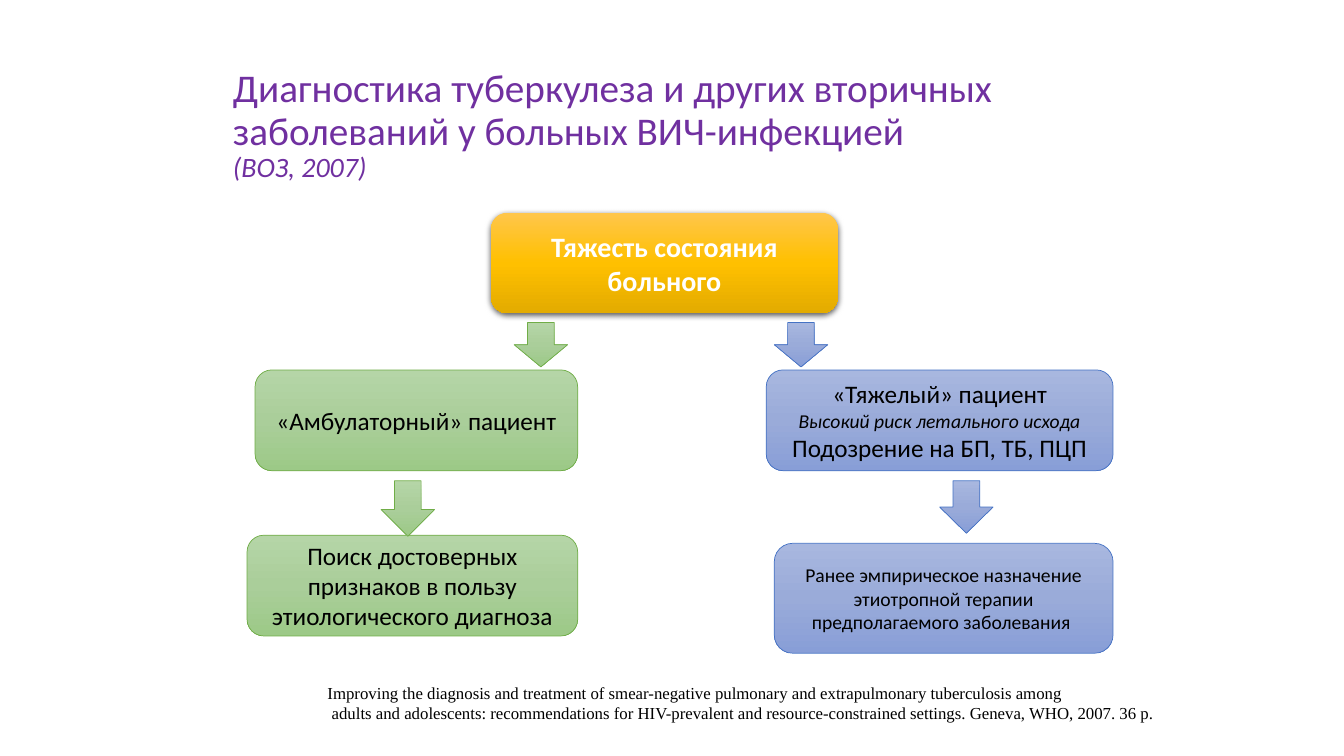
from copy import deepcopy
from dataclasses import dataclass

from lxml.etree import SubElement
from pptx import Presentation
from pptx.dml.color import RGBColor
from pptx.enum.shapes import MSO_SHAPE
from pptx.enum.text import MSO_ANCHOR, MSO_AUTO_SIZE, PP_ALIGN
from pptx.oxml.ns import qn
from pptx.util import Pt

PX = 9144
COLOURS = {
    "title": "7030A0",
    "dark": "000000",
    "light": "FFFFFF",
    "green line": "70AD47",
    "blue line": "4472C4",
}
GRADIENTS = {
    "green": ("B5D5A7", "AACE9A", "9CC987"),
    "blue": ("A8B7DF", "9AABD9", "889ED7"),
    "gold": ("FFC64B", "FFC000", "E3AB00"),
}


@dataclass(frozen=True)
class Line:
    text: str
    size: int = 18
    italic: bool = False
    bold: bool = False
    colour: str = "dark"


@dataclass(frozen=True)
class Step:
    left: int
    top: int
    width: int
    height: int
    theme: str
    lines: tuple[Line, ...]


@dataclass(frozen=True)
class Arrow:
    left: int
    top: int
    height: int
    theme: str


ARROW_WIDTH = 53
STEPS = (
    Step(253, 367, 320, 100, "green", (Line("«Амбулаторный» пациент"),)),
    Step(760, 367, 344, 100, "blue", (
        Line("«Тяжелый» пациент"),
        Line("Высокий риск летального исхода", 14, italic=True),
        Line("Подозрение на БП, ТБ, ПЦП"),
    )),
    Step(245, 531, 328, 100, "green", (
        Line("Поиск достоверных признаков в пользу этиологического диагноза"),
    )),
    Step(768, 539, 336, 109, "blue", (
        Line("Ранее эмпирическое назначение этиотропной терапии "
             "предполагаемого заболевания ", 14),
    )),
    Step(487, 211, 344, 100, "gold", (
        Line("Тяжесть состояния больного", 20, bold=True, colour="light"),
    )),
)
ARROWS = (
    Arrow(932, 477, 52, "blue"),
    Arrow(378, 477, 55, "green"),
    Arrow(510, 320, 44, "green"),
    Arrow(768, 320, 44, "blue"),
)
CITATION = (
    "Improving the diagnosis and treatment of smear-negative pulmonary "
    "and extrapulmonary tuberculosis among",
    " adults and adolescents: recommendations for HIV-prevalent and "
    "resource-constrained settings. Geneva, WHO, 2007. 36 p.",
)


def box(left: int, top: int, width: int, height: int) -> tuple[int, ...]:
    """Return a position and size in EMU."""
    return tuple(value * PX for value in (left, top, width, height))


def write(paragraph, text: str, *, size: int, colour: str = "dark",
          font: str = "Calibri", bold: bool = False, italic: bool = False,
          align: PP_ALIGN = PP_ALIGN.CENTER) -> None:
    """Append a formatted run to a paragraph."""
    paragraph.alignment = align
    run = paragraph.add_run()
    run.text = text
    run.font.name = font
    run.font.size = Pt(size)
    run.font.bold = bold
    run.font.italic = italic
    run.font.color.rgb = RGBColor.from_string(COLOURS[colour])


def next_paragraph(frame, index: int):
    """Return the first paragraph of a frame or add a further one."""
    return frame.add_paragraph() if index else frame.paragraphs[0]


def paint(shape, theme: str) -> None:
    """Give a shape the gradient and outline of its theme."""
    shape.shadow.inherit = False
    shape.fill.gradient()
    shape.fill.gradient_angle = 270
    stop_list = shape._element.spPr.find(qn("a:gradFill")).find(qn("a:gsLst"))
    stop_list.insert(1, deepcopy(stop_list[0]))
    stops = zip(shape.fill.gradient_stops, (0, 0.5, 1), GRADIENTS[theme])
    for stop, position, colour in stops:
        stop.position = position
        stop.color.rgb = RGBColor.from_string(colour)
    outline = COLOURS.get(f"{theme} line")
    if outline:
        shape.line.color.rgb = RGBColor.from_string(outline)
        shape.line.width = Pt(0.5)
    else:
        shape.line.fill.background()
        cast_shadow(shape)


def cast_shadow(shape) -> None:
    """Add a soft shadow below a shape."""
    effects = shape._element.spPr.find(qn("a:effectLst"))
    shadow = SubElement(effects, qn("a:outerShdw"), blurRad=str(Pt(4.5)),
                        dist=str(Pt(1.5)), dir="5400000", algn="ctr",
                        rotWithShape="0")
    colour = SubElement(shadow, qn("a:srgbClr"), val=COLOURS["dark"])
    SubElement(colour, qn("a:alpha"), val="63000")


def add_title(slide) -> None:
    """Fill and place the title placeholder."""
    title = slide.shapes.title
    title.left, title.top, title.width, title.height = box(221, 78, 900, 125)
    frame = title.text_frame
    frame.word_wrap = True
    frame.auto_size = MSO_AUTO_SIZE.NONE
    frame.vertical_anchor = MSO_ANCHOR.MIDDLE
    frame.margin_bottom = 35 * PX
    paragraph = frame.paragraphs[0]
    paragraph.line_spacing = 0.9
    write(paragraph, "Диагностика туберкулеза и других вторичных "
          "заболеваний у больных ВИЧ-инфекцией ",
          size=28, colour="title", align=PP_ALIGN.LEFT)
    paragraph.add_line_break()
    write(paragraph, "(ВОЗ, 2007)", size=20, colour="title", italic=True,
          align=PP_ALIGN.LEFT)


def add_step(slide, step: Step) -> None:
    """Draw a rounded box with its lines of text."""
    shape = slide.shapes.add_shape(
        MSO_SHAPE.ROUNDED_RECTANGLE,
        *box(step.left, step.top, step.width, step.height))
    paint(shape, step.theme)
    frame = shape.text_frame
    frame.word_wrap = True
    frame.vertical_anchor = MSO_ANCHOR.MIDDLE
    for index, line in enumerate(step.lines):
        write(next_paragraph(frame, index), line.text, size=line.size,
              colour=line.colour, bold=line.bold, italic=line.italic)


def add_arrow(slide, arrow: Arrow) -> None:
    """Draw a block arrow pointing down."""
    shape = slide.shapes.add_shape(
        MSO_SHAPE.DOWN_ARROW,
        *box(arrow.left, arrow.top, ARROW_WIDTH, arrow.height))
    paint(shape, arrow.theme)


def add_citation(slide) -> None:
    """Write the source of the scheme at the foot of the slide."""
    frame = slide.shapes.add_textbox(*box(266, 672, 900, 50)).text_frame
    frame.word_wrap = False
    frame.auto_size = MSO_AUTO_SIZE.SHAPE_TO_FIT_TEXT
    frame.vertical_anchor = MSO_ANCHOR.MIDDLE
    for index, text in enumerate(CITATION):
        paragraph = next_paragraph(frame, index)
        write(paragraph, text, size=12, font="Times New Roman",
              align=PP_ALIGN.JUSTIFY)
        paragraph._p.get_or_add_pPr().set("indent", str(49 * PX))


def main() -> None:
    """Build the slide and save it."""
    presentation = Presentation()
    presentation.slide_width, presentation.slide_height = 1333 * PX, 750 * PX
    slide = presentation.slides.add_slide(presentation.slide_layouts[5])
    add_title(slide)
    for step in STEPS:
        add_step(slide, step)
    for arrow in ARROWS:
        add_arrow(slide, arrow)
    add_citation(slide)
    presentation.save("out.pptx")


if __name__ == "__main__":
    main()
